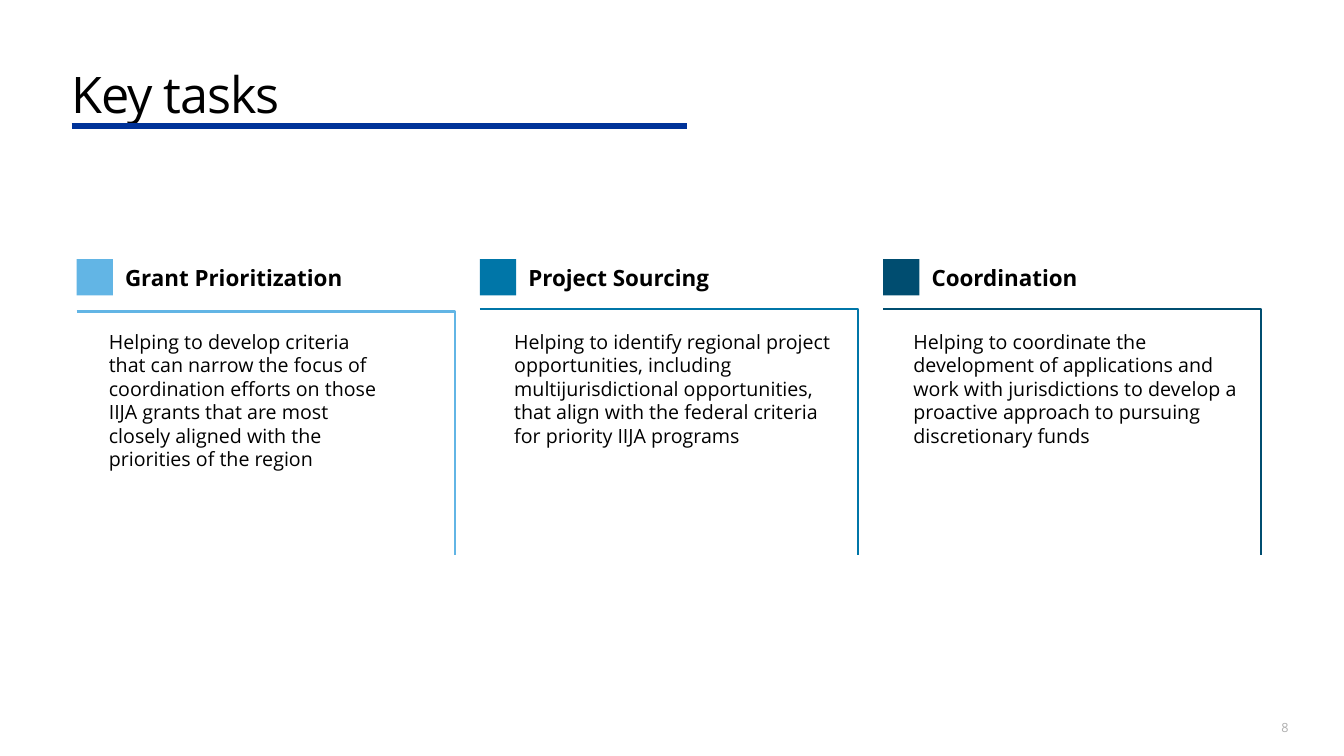
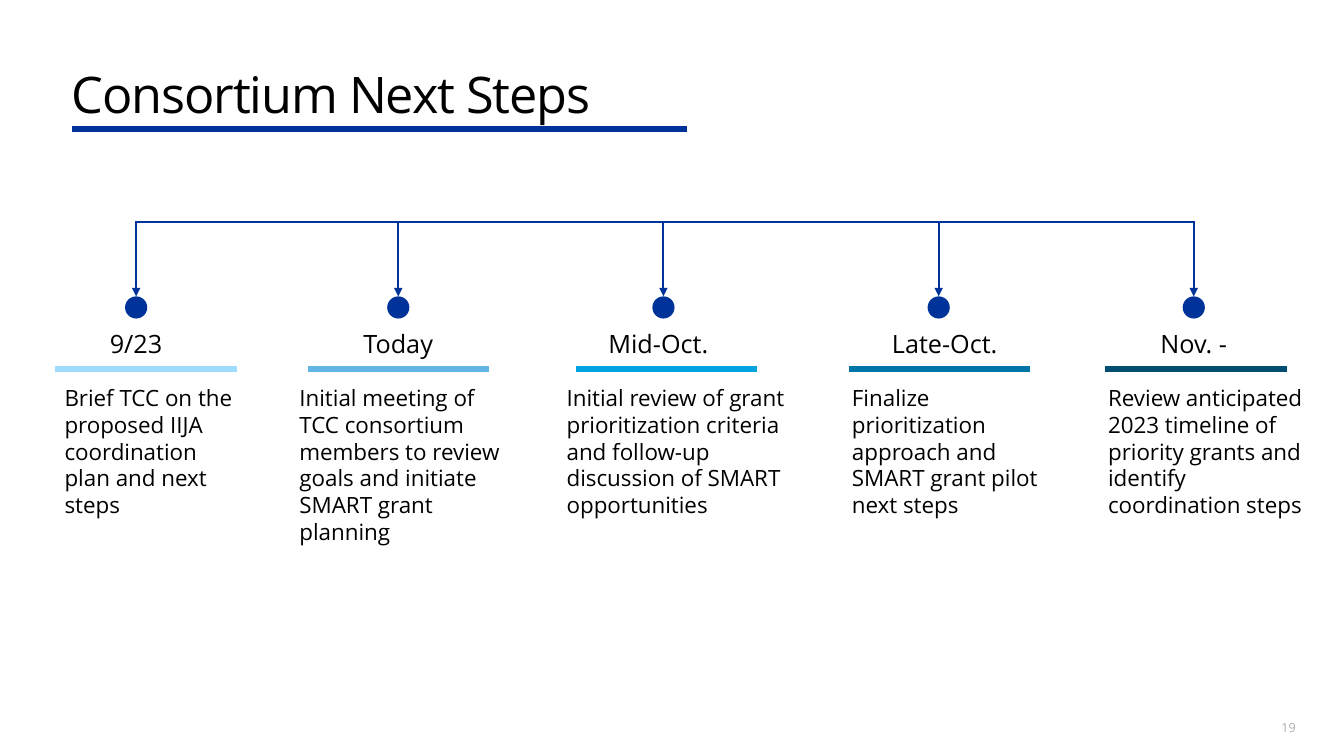
from lxml import etree
from pptx import Presentation
from pptx.dml.color import RGBColor
from pptx.enum.shapes import MSO_CONNECTOR, MSO_SHAPE
from pptx.enum.text import MSO_ANCHOR, MSO_AUTO_SIZE, PP_ALIGN
from pptx.oxml.ns import qn
from pptx.util import Inches, Pt

LEFT, CENTER = PP_ALIGN.LEFT, PP_ALIGN.CENTER
TOP, MIDDLE, BOTTOM = MSO_ANCHOR.TOP, MSO_ANCHOR.MIDDLE, MSO_ANCHOR.BOTTOM
STRAIGHT = MSO_CONNECTOR.STRAIGHT
RECT, OVAL = MSO_SHAPE.RECTANGLE, MSO_SHAPE.OVAL
NO_FIT = MSO_AUTO_SIZE.NONE
TITLE_ONLY = 5

FONT = "Open Sans"
COLORS = {
    "black": "000000", "gray": "AEAEAE", "navy": "003399",
    "pale": "A0DCFF", "sky": "62B5E5", "cyan": "00A3E0",
    "teal": "0076A8", "deep": "004D70",
}


def rgb(name):
    return RGBColor.from_string(COLORS[name])


class Deck:
    """Holds the shared style and the slide being built."""

    def __init__(self):
        self.prs = Presentation()
        self.prs.slide_width = Inches(13.33)
        self.prs.slide_height = Inches(7.5)
        self.slide = None

    def start(self, title, number, rule):
        """Add a slide with its title, title rule (at height rule) and number."""
        layout = self.prs.slide_layouts[TITLE_ONLY]
        self.slide = self.prs.slides.add_slide(layout)
        head = self.slide.shapes.title
        head.left, head.top = Inches(0.71), Inches(0.58)
        head.width, head.height = Inches(12.42), Inches(0.65)
        self.fill_text(head, title, 36, anchor=BOTTOM, inset=0.05)
        para = head.text_frame.paragraphs[0]
        para.line_spacing = 0.9
        para.runs[0].font._element.set("spc", "-80")
        self.line((0.71, rule), (6.81, rule), "navy", 4.5)
        self.text(number, 12.71, 7.14, 0.3, 0.15, 9, color="gray")

    def fill_text(self, shape, words, size, color="black", bold=False,
                  align=LEFT, anchor=TOP, inset=0):
        frame = shape.text_frame
        frame.text = words
        frame.word_wrap = True
        frame.auto_size = NO_FIT
        frame.vertical_anchor = anchor
        frame.margin_left = frame.margin_right = frame.margin_bottom = 0
        frame.margin_top = Inches(inset)
        para = frame.paragraphs[0]
        para.alignment = align
        font = para.runs[0].font
        font.name, font.size, font.bold = FONT, Pt(size), bold
        font.color.rgb = rgb(color)

    def text(self, words, x, y, w, h, size, **style):
        box = self.slide.shapes.add_textbox(
            Inches(x), Inches(y), Inches(w), Inches(h))
        self.fill_text(box, words, size, **style)

    def line(self, start, end, color, width, arrow=False):
        points = [Inches(v) for v in (*start, *end)]
        line = self.slide.shapes.add_connector(STRAIGHT, *points)
        line.line.color.rgb = rgb(color)
        line.line.width = Pt(width)
        props = line._element.spPr
        if arrow:
            tail = etree.SubElement(props.find(qn("a:ln")), qn("a:tailEnd"))
            tail.set("type", "triangle")
        etree.SubElement(props, qn("a:effectLst"))

    def shape(self, kind, x, y, size, color):
        side = Inches(size)
        item = self.slide.shapes.add_shape(
            kind, Inches(x), Inches(y), side, side)
        item.shadow.inherit = False
        item.fill.solid()
        item.fill.fore_color.rgb = rgb(color)
        item.line.fill.background()

    def corner(self, x, y, right, bottom, color):
        """Draw an open outline along the top and right edges."""
        pen = self.slide.shapes.build_freeform(Inches(x), Inches(y))
        pen.add_line_segments(
            [(Inches(right), Inches(y)), (Inches(right), Inches(bottom))],
            close=False)
        edge = pen.convert_to_shape()
        edge.shadow.inherit = False
        edge.fill.background()
        edge.line.color.rgb = rgb(color)
        edge.line.width = Pt(1.5)


def tasks(deck):
    deck.start("Key tasks", "8", 1.25)
    # heading, colour, outline top, body left, body width, body
    cards = [
        ("Grant Prioritization", "sky", 3.09, 1.08, 2.76,
         "Helping to develop criteria that can narrow the focus of "
         "coordination efforts on those IIJA grants that are most closely "
         "aligned with the priorities of the region"),
        ("Project Sourcing", "teal", 3.07, 5.1, 3.18,
         "Helping to identify regional project opportunities, including "
         "multijurisdictional opportunities, that align with the federal "
         "criteria for priority IIJA programs"),
        ("Coordination", "deep", 3.07, 9.06, 3.45,
         "Helping to coordinate the development of applications and work "
         "with jurisdictions to develop a proactive approach to pursuing "
         "discretionary funds"),
    ]
    for i, (name, color, top, left, width, body) in enumerate(cards):
        x = 0.76 + 4 * i
        deck.shape(RECT, x, 2.57, 0.36, color)
        deck.text(name, x + 0.48, 2.48, 3.19, 0.55, 16,
                  bold=True, anchor=MIDDLE)
        deck.corner(x, top, x + 3.75, 5.51, color)
        deck.text(body, left, 3.27, width, 1.41, 14)


def steps(deck):
    deck.start("Consortium Next Steps", "19", 1.28)
    # date, colour, dot centre, date centre, bar left, body left, width, body
    stops = [
        ("9/23", "pale", 1.35, 1.35, 0.55, 0.64, 1.8,
         "Brief TCC on the proposed IIJA coordination plan and next steps"),
        ("Today", "sky", 3.95, 3.95, 3.05, 2.97, 2.13,
         "Initial meeting of TCC consortium members to review goals and "
         "initiate SMART grant planning"),
        ("Mid-Oct.", "cyan", 6.58, 6.53, 5.71, 5.62, 2.27,
         "Initial review of grant prioritization criteria and follow-up "
         "discussion of SMART opportunities"),
        ("Late-Oct.", "teal", 9.31, 9.37, 8.42, 8.45, 1.98,
         "Finalize prioritization approach and SMART grant pilot next steps"),
        ("Nov. -", "deep", 11.84, 11.84, 10.96, 10.99, 1.98,
         "Review anticipated 2023 timeline of priority grants and identify "
         "coordination steps"),
    ]
    rail, dot, size = 2.2, 2.94, 0.22
    deck.line((stops[0][2] - 0.01, rail), (stops[-1][2] + 0.01, rail),
              "navy", 1.5)
    for date, color, mid, label, bar, left, width, body in stops:
        deck.line((mid, rail), (mid, dot), "navy", 1.5, arrow=True)
        deck.shape(OVAL, mid - size / 2, dot, size, "navy")
        deck.text(date, label - 0.75, 3.21, 1.5, 0.4, 18,
                  align=CENTER, inset=0.05)
        deck.line((bar, 3.66), (bar + 1.8, 3.66), color, 4.5)
        deck.text(body, left, 3.81, width, 1.64, 16)


def main():
    deck = Deck()
    tasks(deck)
    steps(deck)
    deck.prs.save("out.pptx")


if __name__ == "__main__":
    main()
